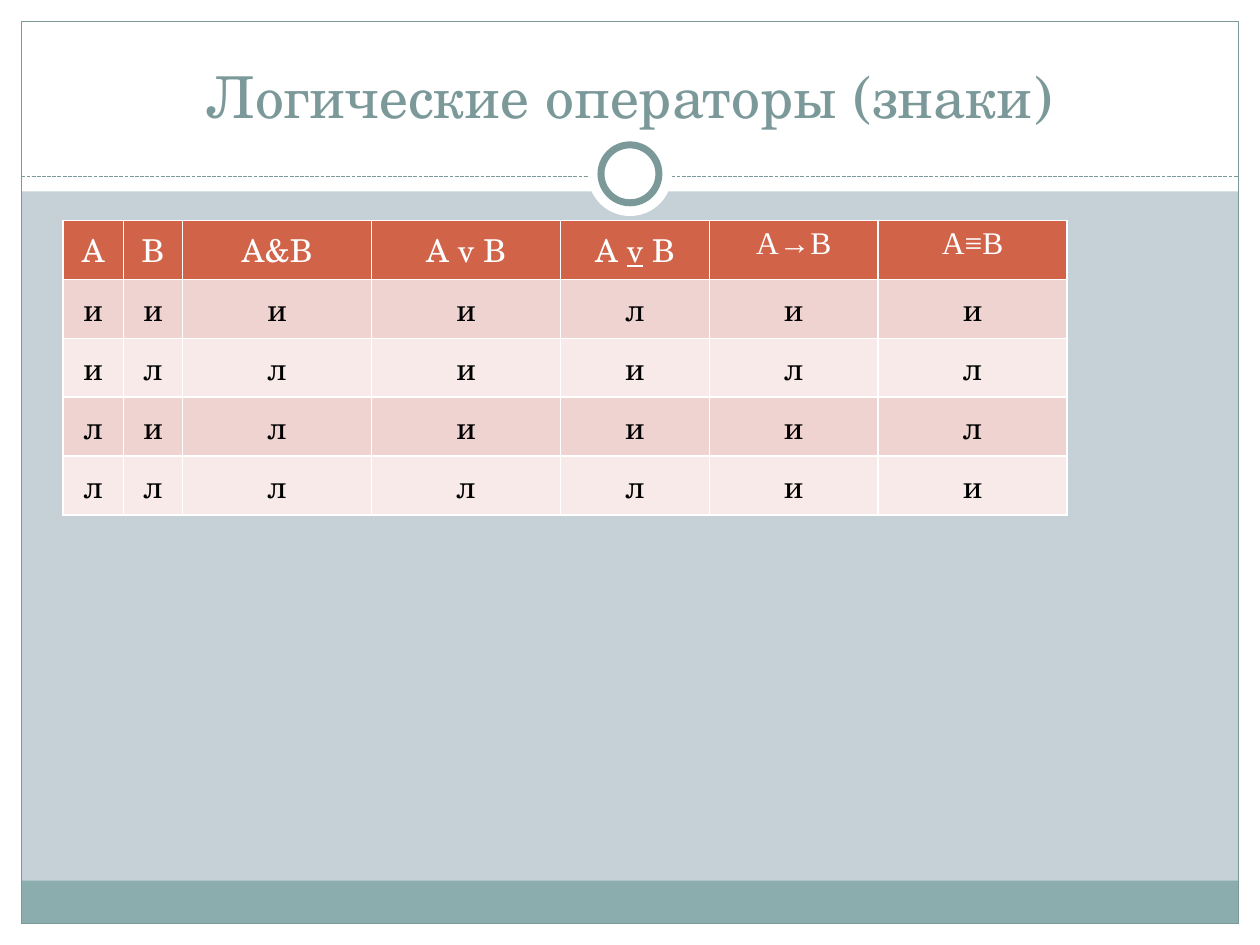
from pptx import Presentation
from pptx.dml.color import RGBColor
from pptx.enum.dml import MSO_LINE
from pptx.enum.shapes import MSO_CONNECTOR as CONN, MSO_SHAPE as SHAPE
from pptx.enum.text import MSO_ANCHOR as ANCHOR, MSO_AUTO_SIZE as FIT, PP_ALIGN as ALIGN
from pptx.oxml.ns import qn
from pptx.util import Inches, Pt
from lxml.etree import SubElement

COLORS = {
    "white": "FFFFFF", "black": "000000", "back": "C5D1D7", "teal": "7C999A",
    "footer": "8CADAE", "head": "D16349", "odd": "EED3D0", "even": "F7EAE9",
}
SERIF, TIMES = "TeX Gyre Schola", "Times New Roman"
W, H = 10, 7.5
EDGE = 0.17
COLS = [0.48, 0.47, 1.5, 1.5, 1.18, 1.34, 1.5]
HEADS = ["A", "B", "A&B", "A v B", "A _v_ B", "A→B", "A≡B"]
TRUTH = ["иииилии", "иллиилл", "лилииил", "лллллии"]


def rgb(name):
    """Return the named palette colour."""
    return RGBColor.from_string(COLORS[name])


def write(tf, text, size=18, font=SERIF, color="black", align=ALIGN.CENTER):
    """Write one paragraph; parts between underscores are underlined."""
    p = tf.paragraphs[0]
    p.alignment = align
    for i, part in enumerate(text.split("_")):
        r = p.add_run()
        r.text = part
        r.font.size, r.font.name = Pt(size), font
        r.font.color.rgb = rgb(color)
        r.font.bold = False
        r.font.underline = i % 2 == 1


def shape(s, kind, box, fill=None, line=None, width=0.75):
    """Add a preset shape with optional fill and outline."""
    sp = s.shapes.add_shape(kind, *map(Inches, box))
    sp.shadow.inherit = False
    if fill:
        sp.fill.solid()
        sp.fill.fore_color.rgb = rgb(fill)
    else:
        sp.fill.background()
    if line:
        sp.line.color.rgb = rgb(line)
        sp.line.width = Pt(width)
    else:
        sp.line.fill.background()
    return sp


def frame(s, box):
    """Draw the white margins, footer band and outline within the box."""
    x, y, w, h = box
    for part in [(x, y + h - EDGE, w, EDGE), (x, y, w, 1.52),
                 (x, y, EDGE, h), (x + w - EDGE, y, EDGE, h)]:
        shape(s, SHAPE.RECTANGLE, part, fill="white")
    inner = w - 2 * EDGE
    shape(s, SHAPE.RECTANGLE, (x + EDGE, y + h - EDGE - 0.34, inner, 0.34), fill="footer")
    shape(s, SHAPE.RECTANGLE, (x + EDGE, y + EDGE, inner, h - 2 * EDGE), line="teal")


def divider(s, box):
    """Draw the dashed rule at the top of the box and its centred ring."""
    x, y, w, h = box
    c = s.shapes.add_connector(CONN.STRAIGHT, *map(Inches, (x, y, x + w, y)))
    c.line.color.rgb = rgb("teal")
    c.line.width = Pt(0.75)
    c.line.dash_style = MSO_LINE.SQUARE_DOT
    SubElement(c._element.spPr, qn("a:effectLst"))
    cx, cy = x + w / 2, y - 0.02
    for d, line in [(h, None), (0.46, "teal")]:
        shape(s, SHAPE.OVAL, (cx - d / 2, cy - d / 2, d, d), "white", line, 4)


def title(s, text, box):
    """Place the title placeholder in the box, above the frame."""
    sp = s.shapes.title
    sp.left, sp.top, sp.width, sp.height = map(Inches, box)
    tf = sp.text_frame
    tf.word_wrap, tf.auto_size = True, FIT.NONE
    tf.vertical_anchor = ANCHOR.BOTTOM
    write(tf, text, size=33, color="teal")
    s.shapes._spTree.append(sp._element)


def style_cell(cell, fill):
    """Give a cell white borders and a solid fill."""
    tcPr = cell._tc.get_or_add_tcPr()
    for side in "LRTB":
        ln = SubElement(tcPr, qn(f"a:ln{side}"), w=str(Pt(1)))
        SubElement(SubElement(ln, qn("a:solidFill")), qn("a:srgbClr"), val=COLORS["white"])
    cell.fill.solid()
    cell.fill.fore_color.rgb = rgb(fill)


def truth_table(s, box):
    """Fill the box with the truth table of the operators."""
    rows = [HEADS, *TRUTH]
    table = s.shapes.add_table(len(rows), len(COLS), *map(Inches, box)).table
    for col, width in zip(table.columns, COLS):
        col.width = Inches(box[2] * width / sum(COLS))
    for i, row in enumerate(rows):
        fill = "head" if i == 0 else "odd" if i % 2 else "even"
        for j, text in enumerate(row):
            cell = table.cell(i, j)
            style_cell(cell, fill)
            write(cell.text_frame, text, color="black" if i else "white",
                  font=TIMES if i == 0 and j >= 5 else SERIF)


def main():
    """Build the slide and save it."""
    prs = Presentation()
    prs.slide_width, prs.slide_height = Inches(W), Inches(H)
    s = prs.slides.add_slide(prs.slide_layouts[5])
    s.background.fill.solid()
    s.background.fill.fore_color.rgb = rgb("back")
    frame(s, (0, 0, W, H))
    divider(s, (EDGE, 1.4, W - 2 * EDGE, 0.67))
    truth_table(s, (W / 20, 1.75, sum(COLS), 2.03))
    title(s, "Логические операторы (знаки)", (W / 30, H / 30, W * 14 / 15, H / 9))
    prs.save("out.pptx")


if __name__ == "__main__":
    main()
